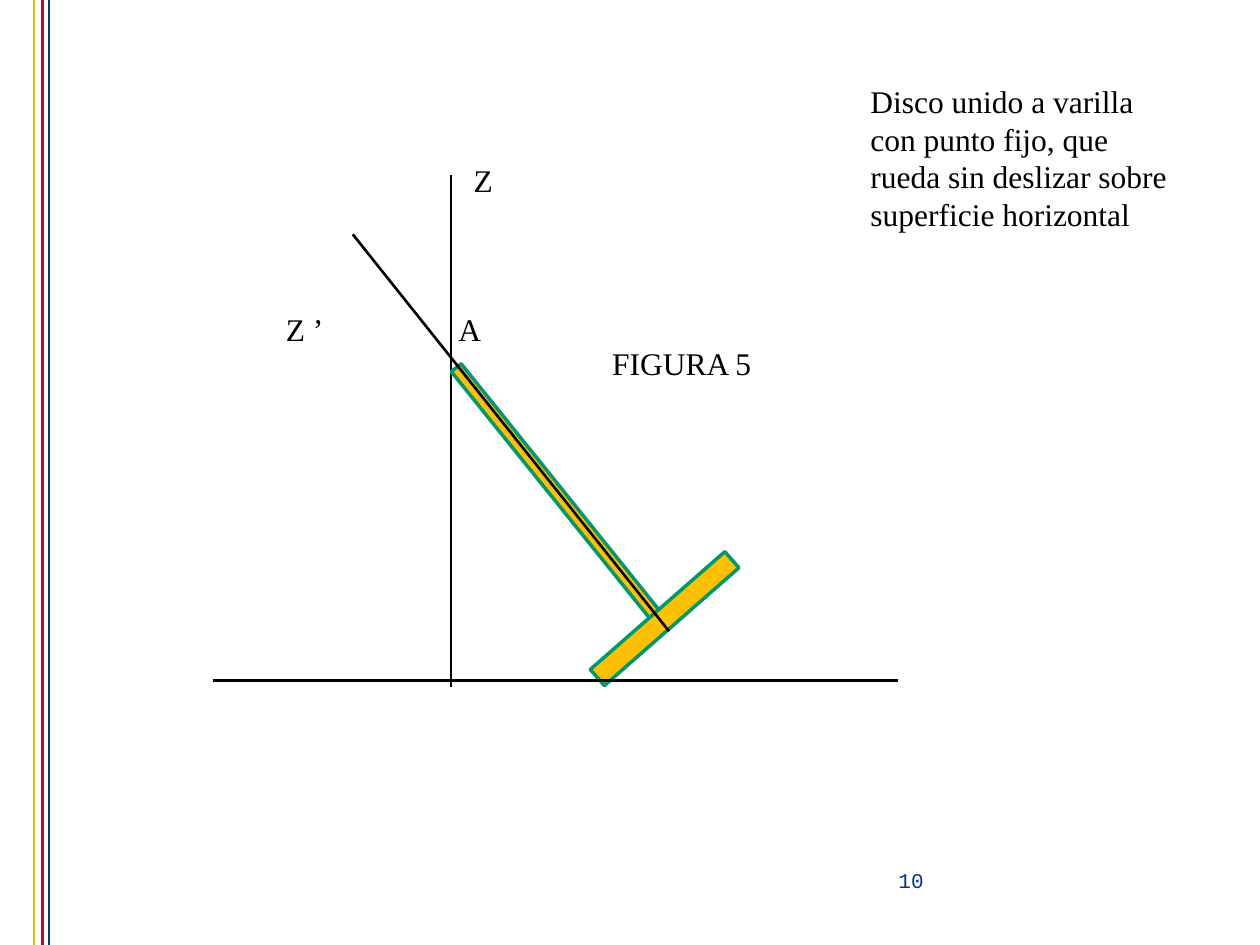
import lxml.etree
import pptx
import pptx.dml.color
import pptx.enum.shapes
import pptx.enum.text
import pptx.oxml.ns
import pptx.util
from pptx.util import Inches


def to_color(hex_string):
    """Return the colour for a hex string."""
    return pptx.dml.color.RGBColor.from_string(hex_string)


def add_text(slide, text, left, top, width, height, font="Times New Roman",
             size=18, color="000000", alignment=pptx.enum.text.PP_ALIGN.LEFT):
    """Add a wrapping text box with one formatted paragraph."""
    shape = slide.shapes.add_textbox(left, top, width, height)
    shape.text_frame.word_wrap = True
    paragraph = shape.text_frame.paragraphs[0]
    paragraph.text = text
    paragraph.alignment = alignment
    paragraph.font.name = font
    paragraph.font.size = pptx.util.Pt(size)
    paragraph.font.color.rgb = to_color(color)
    return shape


def add_line(slide, start_x, start_y, end_x, end_y, color="000000"):
    """Add a straight line without a shadow."""
    line = slide.shapes.add_connector(
        pptx.enum.shapes.MSO_CONNECTOR.STRAIGHT, start_x, start_y, end_x, end_y)
    line.line.color.rgb = to_color(color)
    line.line.width = pptx.util.Pt(1.5)
    lxml.etree.SubElement(line._element.spPr, pptx.oxml.ns.qn("a:effectLst"))
    return line


def add_bar(slide, left, top, width, height, rotation):
    """Add a rotated yellow bar with a green outline."""
    bar = slide.shapes.add_shape(
        pptx.enum.shapes.MSO_SHAPE.RECTANGLE, left, top, width, height)
    bar.rotation = rotation
    bar.shadow.inherit = False
    bar.fill.solid()
    bar.fill.fore_color.rgb = to_color("FFC000")
    bar.line.color.rgb = to_color("009771")
    bar.line.width = pptx.util.Pt(2)
    return bar


def add_margin_stripes(slide, left, top, height):
    """Draw the three coloured stripes of the left margin."""
    for offset, color in ((0, "EBBD00"), (0.07, "C1003D"), (0.12, "003F6D")):
        x = left + Inches(offset)
        add_line(slide, x, top, x, top + height, color)


def add_figure(slide, left, top, width, height):
    """Draw the rolling disc, its rod, the axes, the ground and the labels."""
    vertical_x = left + Inches(1.89)
    ground_y = top + height - Inches(0.05)
    add_line(slide, vertical_x, top + Inches(0.16), vertical_x, top + height)
    add_bar(slide, left + Inches(1.46), top + Inches(2.62),
            Inches(2.52), Inches(0.1), 51.2)
    add_bar(slide, left + Inches(3.5), top + Inches(2.97),
            Inches(0.17), Inches(1.42), 48.8)
    add_line(slide, left, ground_y, left + width, ground_y)
    add_line(slide, left + Inches(1.11), top + Inches(0.63),
             left + Inches(3.62), top + Inches(3.78))
    labels = (("Z", 1.97, 0, 1.02), ("Z ’", 0.48, 1.18, 1.02),
              ("A", 1.85, 1.18, 0.87), ("FIGURA 5", 3.07, 1.45, 1.89))
    for text, x, y, label_width in labels:
        add_text(slide, text, left + Inches(x), top + Inches(y),
                 Inches(label_width), Inches(0.4))


def add_page_number(slide, left, top, width, height):
    """Place the page number in the footer."""
    add_text(slide, "10", left, top, width, height, font="Courier New", size=12,
             color="003399", alignment=pptx.enum.text.PP_ALIGN.CENTER)


def main():
    """Build and save the slide."""
    presentation = pptx.Presentation()
    presentation.slide_width = Inches(10)
    presentation.slide_height = Inches(7.5)
    slide = presentation.slides.add_slide(presentation.slide_layouts[6])
    add_margin_stripes(slide, Inches(0.27), 0, presentation.slide_height)
    add_figure(slide, Inches(1.69), Inches(1.23), Inches(5.44), Inches(4.22))
    add_text(slide, "Disco unido a varilla con punto fijo, que rueda sin deslizar "
             "sobre superficie horizontal",
             Inches(6.81), Inches(0.6), Inches(2.68), Inches(1.31))
    add_page_number(slide, Inches(6.94), Inches(6.84), Inches(0.58), Inches(0.27))
    presentation.save("out.pptx")


if __name__ == "__main__":
    main()
